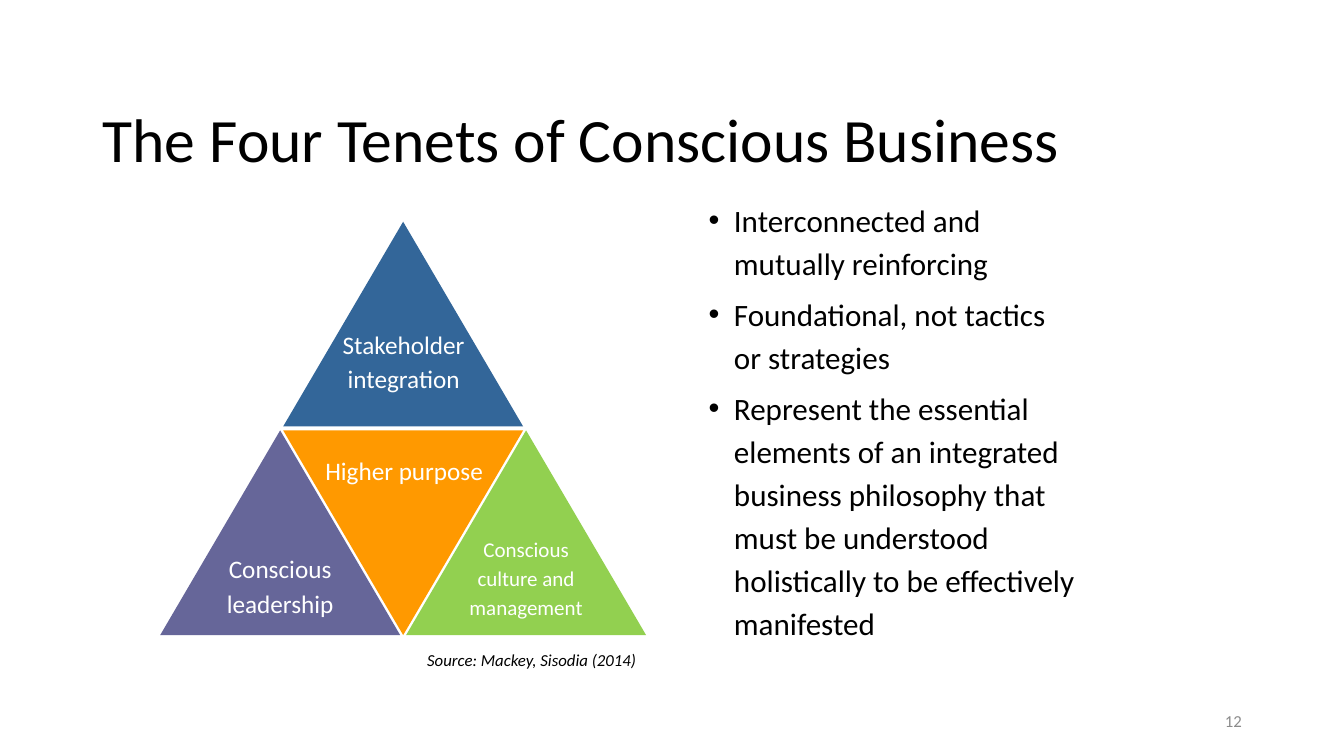
from lxml.etree import SubElement
from pptx import Presentation
from pptx.dml.color import RGBColor
from pptx.enum.shapes import MSO_SHAPE
from pptx.enum.text import MSO_ANCHOR, PP_ALIGN
from pptx.oxml.ns import qn
from pptx.util import Inches, Pt

SLIDE_WIDTH = Inches(13.333)
SLIDE_HEIGHT = Inches(7.5)
BLACK = RGBColor(0x00, 0x00, 0x00)
WHITE = RGBColor(0xFF, 0xFF, 0xFF)
GRAY = RGBColor(0x8C, 0x8C, 0x8C)
BLUE = RGBColor(0x33, 0x66, 0x99)
ORANGE = RGBColor(0xFF, 0x99, 0x00)
GREEN = RGBColor(0x92, 0xD0, 0x50)
PURPLE = RGBColor(0x66, 0x66, 0x99)

PYRAMID_LEFT, PYRAMID_TOP = 21.07, 29.33
TRIANGLE_WIDTH, TRIANGLE_HEIGHT = 17.85, 27.07
HALF_STEP, ROW_STEP = 9.15, 27.6

BULLETS = [
    "Interconnected and mutually reinforcing",
    "Foundational, not tactics or strategies",
    "Represent the essential elements of an integrated business philosophy "
    "that must be understood holistically to be effectively manifested",
]


def place(left, top, width, height):
    return (round(SLIDE_WIDTH * left / 100), round(SLIDE_HEIGHT * top / 100),
            round(SLIDE_WIDTH * width / 100), round(SLIDE_HEIGHT * height / 100))


def write(box, lines, size, color, align=PP_ALIGN.LEFT, anchor=MSO_ANCHOR.MIDDLE,
          spacing=1.0, after=0, bullet=False, italic=False):
    frame = box.text_frame
    frame.text = "\n".join(lines)
    frame.word_wrap = True
    frame.vertical_anchor = anchor
    for para in frame.paragraphs:
        para.alignment = align
        para.line_spacing = spacing
        para.space_after = Pt(after)
        if bullet:
            add_bullet(para)
        for span in para.runs:
            span.font.name = "Calibri"
            span.font.size = Pt(size)
            span.font.color.rgb = color
            span.font.italic = italic


def add_bullet(para):
    properties = para._p.get_or_add_pPr()
    properties.set("marL", str(Inches(0.25)))
    properties.set("indent", str(-Inches(0.25)))
    SubElement(properties, qn("a:buFont")).set("typeface", "Arial")
    SubElement(properties, qn("a:buChar")).set("char", "•")


def clear_margins(box):
    frame = box.text_frame
    frame.margin_left = frame.margin_right = 0
    frame.margin_top = frame.margin_bottom = 0


def add_text(page, area, lines, size, color, **style):
    box = page.shapes.add_textbox(*place(*area))
    write(box, lines, size, color, **style)
    return box


def add_label(page, area, text):
    box = add_text(page, area, [text], 18, WHITE,
                   align=PP_ALIGN.CENTER, spacing=1.15)
    clear_margins(box)


def add_triangle(page, side, row, color, rotation=0):
    area = place(PYRAMID_LEFT + side * HALF_STEP, PYRAMID_TOP + row * ROW_STEP,
                 TRIANGLE_WIDTH, TRIANGLE_HEIGHT)
    triangle = page.shapes.add_shape(MSO_SHAPE.ISOSCELES_TRIANGLE, *area)
    triangle.shadow.inherit = False
    triangle.fill.solid()
    triangle.fill.fore_color.rgb = color
    triangle.line.fill.background()
    triangle.rotation = rotation
    clear_margins(triangle)
    return triangle


def add_pyramid(page):
    add_triangle(page, 0, 0, BLUE)
    add_triangle(page, 0, 1, ORANGE, rotation=180)
    culture = add_triangle(page, 1, 1, GREEN)
    write(culture, ["Conscious culture and management"], 15, WHITE,
          align=PP_ALIGN.CENTER, anchor=MSO_ANCHOR.TOP, spacing=1.15, after=10)
    leadership = add_triangle(page, -1, 1, PURPLE)
    write(leadership, ["Conscious leadership"], 18, WHITE,
          align=PP_ALIGN.CENTER, spacing=1.15, after=10)
    add_label(page, (23.7, 57.87, 12.75, 8), "Higher purpose")
    add_label(page, (24.82, 42.9, 10.43, 9.2), "Stakeholder integration")


def main():
    deck = Presentation()
    deck.slide_width = SLIDE_WIDTH
    deck.slide_height = SLIDE_HEIGHT
    page = deck.slides.add_slide(deck.slide_layouts[6])
    add_text(page, (6.9, 9.2, 86.25, 19.33),
             ["The Four Tenets of Conscious Business"], 44, BLACK, spacing=0.9)
    add_text(page, (70.65, 92.67, 22.5, 5.33), ["12"], 12, GRAY,
             align=PP_ALIGN.RIGHT)
    add_text(page, (52, 25.2, 28.95, 61.47), BULLETS, 22.2, BLACK,
             anchor=MSO_ANCHOR.TOP, spacing=1.15, after=6, bullet=True)
    add_pyramid(page)
    add_text(page, (28.35, 85.33, 19.73, 4), ["Source: Mackey, Sisodia (2014)"],
             12, BLACK, align=PP_ALIGN.RIGHT, anchor=MSO_ANCHOR.TOP, italic=True)
    deck.save("out.pptx")


if __name__ == "__main__":
    main()
